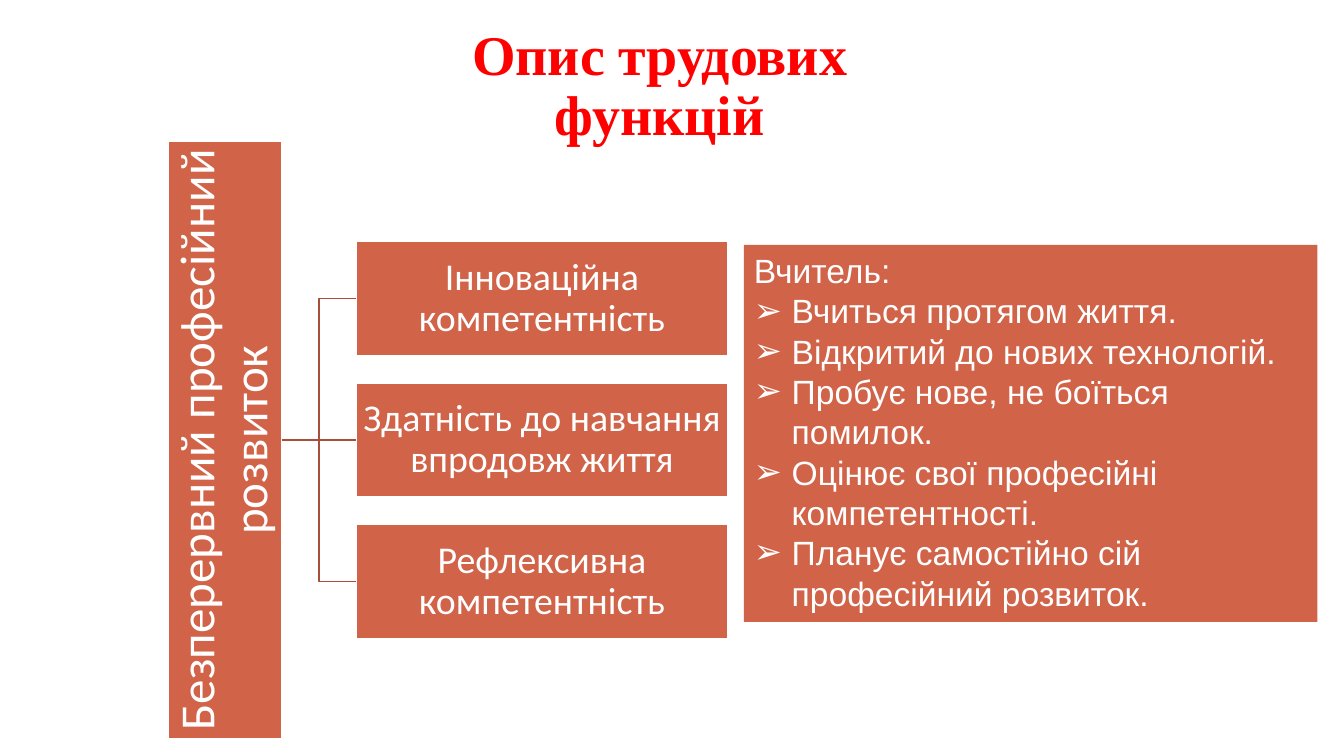
from lxml import etree
from pptx import Presentation
from pptx.dml.color import RGBColor
from pptx.enum.shapes import MSO_CONNECTOR, MSO_SHAPE
from pptx.enum.text import MSO_ANCHOR, PP_ALIGN
from pptx.oxml.ns import qn
from pptx.util import Pt

RECT = MSO_SHAPE.RECTANGLE
ELBOW, LINE = MSO_CONNECTOR.ELBOW, MSO_CONNECTOR.STRAIGHT
MIDDLE, TOP = MSO_ANCHOR.MIDDLE, MSO_ANCHOR.TOP
LEFT, CENTER = PP_ALIGN.LEFT, PP_ALIGN.CENTER
COLORS = {"title": "FF0000", "fill": "D16349", "line": "A74F3A", "white": "FFFFFF"}
SKILLS = [
    "Інноваційна компетентність",
    "Здатність до навчання впродовж життя",
    "Рефлексивна компетентність",
]
TRAITS = [
    "Вчиться протягом життя.",
    "Відкритий до нових технологій.",
    "Пробує нове, не боїться помилок.",
    "Оцінює свої професійні компетентності.",
    "Планує самостійно сій професійний розвиток.",
]


def color(name):
    """Return the named colour."""
    return RGBColor.from_string(COLORS[name])


def style(par, size, face, tint, align=CENTER, gap=0.9):
    """Set the font, alignment and line spacing of a paragraph."""
    par.alignment = align
    par.line_spacing = gap
    par.font.size = Pt(size)
    par.font.name = face
    par.font.color.rgb = color(tint)


def add_title(slide, box, text):
    """Place the centred title in the box."""
    frame = slide.shapes.add_textbox(*map(Pt, box)).text_frame
    frame.word_wrap = True
    frame.vertical_anchor = MIDDLE
    par = frame.paragraphs[0]
    par.text = text
    style(par, 40, "Times New Roman", "title")
    par.font.bold = True


def add_block(slide, box):
    """Add a plain filled rectangle."""
    block = slide.shapes.add_shape(RECT, *map(Pt, box))
    block.shadow.inherit = False
    block.fill.solid()
    block.fill.fore_color.rgb = color("fill")
    block.line.fill.background()
    return block


def add_node(slide, box, text, size):
    """Add a tree node with a white edge and centred text."""
    node = add_block(slide, box)
    node.line.color.rgb = color("white")
    node.line.width = Pt(1)
    frame = node.text_frame
    frame.word_wrap = True
    frame.vertical_anchor = MIDDLE
    frame.margin_left = frame.margin_right = Pt(1.5)
    frame.margin_top = frame.margin_bottom = Pt(1.5)
    par = frame.paragraphs[0]
    par.text = text
    style(par, size, "Calibri", "white")
    return node


def join(slide, root, leaf, kind):
    """Connect the root's right side to the leaf's left side."""
    link = slide.shapes.add_connector(kind, 0, 0, 0, 0)
    link.begin_connect(root, 3)
    link.end_connect(leaf, 1)
    link.line.color.rgb = color("line")
    link.line.width = Pt(1)
    etree.SubElement(link._element.spPr, qn("a:effectLst"))


def add_tree(slide, box, text, skills):
    """Draw an upright root bar joined to a column of skills."""
    left, top, width, height = box
    thick, pitch, inset = 81.4, 101.2, 134.2
    root = add_node(slide, (left, top, thick, height), text, 35)
    root.text_frame._txBody.bodyPr.set("vert", "vert270")
    mid = (len(skills) - 1) / 2
    first = top + (height - thick) / 2 - mid * pitch
    for i, skill in enumerate(skills):
        spot = (left + inset, first + i * pitch, width - inset, thick)
        leaf = add_node(slide, spot, skill, 27)
        join(slide, root, leaf, LINE if i == mid else ELBOW)


def add_panel(slide, box, head, items):
    """Fill a panel with a heading and an arrow-bulleted list."""
    frame = add_block(slide, box).text_frame
    frame.word_wrap = True
    frame.vertical_anchor = TOP
    frame.text = "\n".join([head, *items])
    for i, par in enumerate(frame.paragraphs):
        if i:
            props = par._p.get_or_add_pPr()
            props.set("marL", str(Pt(27)))
            props.set("indent", str(-Pt(27)))
            etree.SubElement(props, qn("a:buFont"), typeface="Arial")
            etree.SubElement(props, qn("a:buChar"), char="➢")
        style(par, 24, "Arial", "white", LEFT, 1.0)


def main():
    """Build and save the slide."""
    deck = Presentation()
    deck.slide_width, deck.slide_height = Pt(960), Pt(540)
    slide = deck.slides.add_slide(deck.slide_layouts[6])
    add_title(slide, (253.4, 38.2, 435.6, 48.2), "Опис трудових функцій")
    add_tree(slide, (120, 100.8, 400, 427), "Безперервний професійний розвиток", SKILLS)
    add_panel(slide, (531.4, 175, 409.7, 269.3), "Вчитель:", TRAITS)
    deck.save("out.pptx")


if __name__ == "__main__":
    main()
